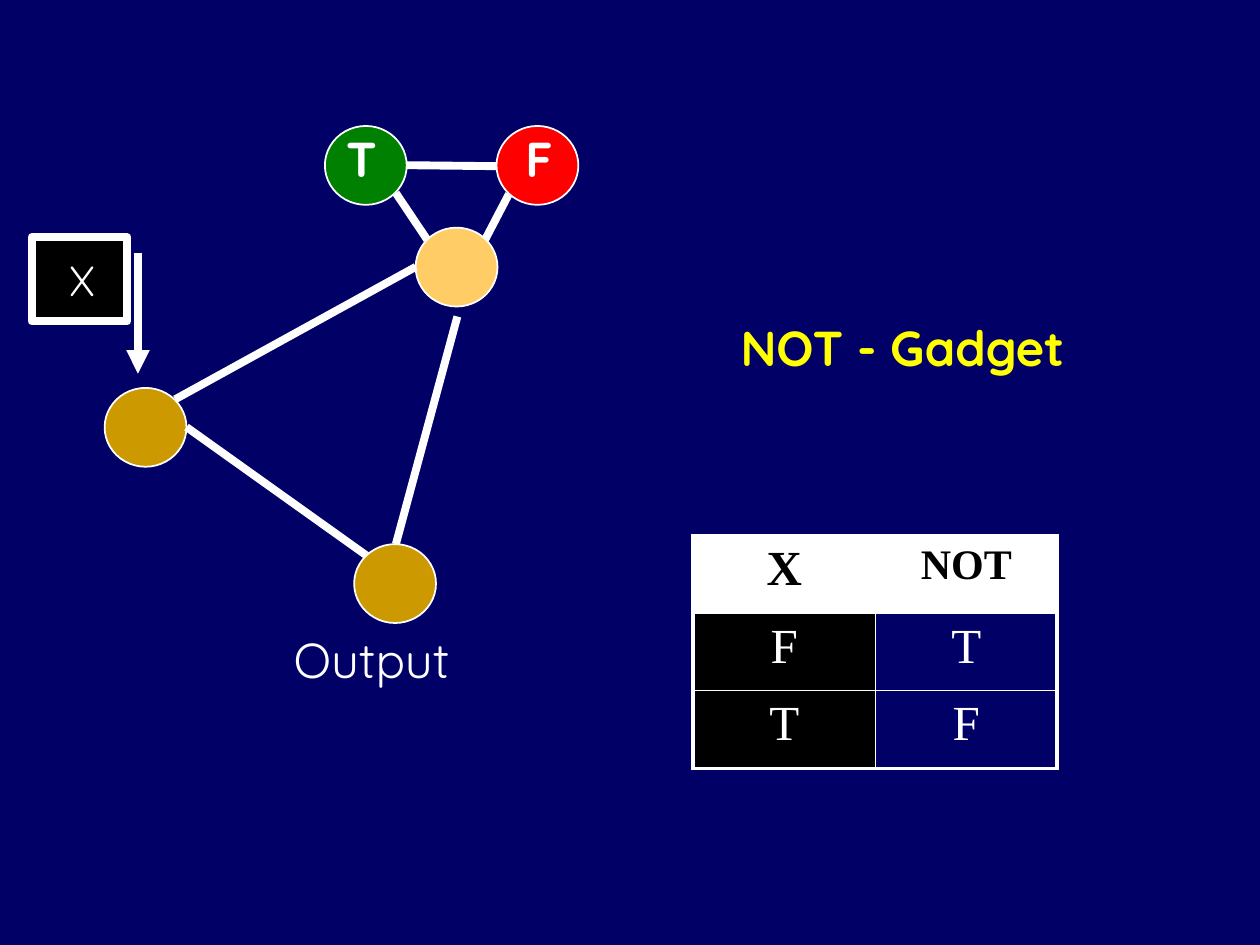
from lxml import etree
from pptx import Presentation
from pptx.dml.color import RGBColor
from pptx.enum.shapes import MSO_CONNECTOR, MSO_SHAPE
from pptx.enum.text import MSO_ANCHOR, MSO_AUTO_SIZE, PP_ALIGN
from pptx.oxml.ns import qn
from pptx.util import Cm, Pt

NAVY = RGBColor(0x00, 0x00, 0x66)
WHITE = RGBColor(0xFF, 0xFF, 0xFF)
BLACK = RGBColor(0x00, 0x00, 0x00)
RED = RGBColor(0xFF, 0x00, 0x00)
GREEN = RGBColor(0x00, 0x80, 0x00)
PEACH = RGBColor(0xFF, 0xCC, 0x66)
GOLD = RGBColor(0xCC, 0x99, 0x00)
YELLOW = RGBColor(0xFF, 0xFF, 0x00)

OVAL = MSO_SHAPE.OVAL
CALLOUT = MSO_SHAPE.LINE_CALLOUT_1
STRAIGHT = MSO_CONNECTOR.STRAIGHT
MIDDLE = MSO_ANCHOR.MIDDLE
TOP = MSO_ANCHOR.TOP
LEFT = PP_ALIGN.LEFT
CENTER = PP_ALIGN.CENTER
GROW = MSO_AUTO_SIZE.SHAPE_TO_FIT_TEXT

SIDE_MARGIN = Cm(0.76)
END_MARGIN = Cm(0.13)
THICK = Pt(4.5)


def write(frame, text, size=28, font="Quicksand", color=WHITE, bold=False, align=LEFT):
    paragraph = frame.paragraphs[0]
    paragraph.alignment = align
    run = paragraph.add_run()
    run.text = text
    run.font.size = Pt(size)
    run.font.name = font
    run.font.bold = bold
    run.font.color.rgb = color


def style_shape(shape, fill, width):
    shape.shadow.inherit = False
    shape.fill.solid()
    shape.fill.fore_color.rgb = fill
    shape.line.color.rgb = WHITE
    shape.line.width = width


prs = Presentation()
prs.slide_width = Cm(25.4)
prs.slide_height = Cm(19.05)
slide = prs.slides.add_slide(prs.slide_layouts[6])
slide.background.fill.solid()
slide.background.fill.fore_color.rgb = NAVY
shapes = slide.shapes

nodes = [
    (10.01, 2.54, RED),
    (8.38, 4.59, PEACH),
    (6.55, 2.54, GREEN),
    (7.14, 10.97, GOLD),
    (2.11, 7.82, GOLD),
]
for left, top, fill in nodes:
    node = shapes.add_shape(OVAL, Cm(left), Cm(top), Cm(1.65), Cm(1.59))
    style_shape(node, fill, Pt(1))

edges = [
    (8.2, 3.33, 10.01, 3.35),
    (10.26, 3.91, 9.78, 4.83),
    (7.98, 3.89, 8.61, 4.83),
    (3.53, 8.05, 8.38, 5.38),
    (9.22, 6.38, 7.98, 10.97),
    (3.76, 8.61, 7.39, 11.2),
]
for ends in edges:
    edge = shapes.add_connector(STRAIGHT, *[Cm(value) for value in ends])
    edge.line.color.rgb = WHITE
    edge.line.width = THICK
    etree.SubElement(edge._element.spPr, qn("a:effectLst"))

labels = [
    ("T", 6.22, 2.46, 2.46, 1.78, True, True, WHITE),
    ("F", 9.83, 2.46, 2.29, 1.78, False, True, WHITE),
    ("Output", 5.16, 12.57, 4.8, 1.45, False, False, WHITE),
    ("NOT - Gadget", 14.17, 6.27, 9.91, 1.78, False, True, YELLOW),
]
for text, left, top, width, height, wrap, bold, color in labels:
    label = shapes.add_textbox(Cm(left), Cm(top), Cm(width), Cm(height)).text_frame
    label.margin_left = label.margin_right = SIDE_MARGIN
    label.margin_top = label.margin_bottom = END_MARGIN
    label.word_wrap = wrap
    label.auto_size = GROW
    write(label, text, bold=bold, color=color)

input_callout = shapes.add_shape(CALLOUT, Cm(0.64), Cm(4.78), Cm(1.93), Cm(1.7))
for index, value in enumerate((0.19, 1.11, 1.62, 1.11)):
    input_callout.adjustments[index] = value
style_shape(input_callout, BLACK, THICK)
etree.SubElement(input_callout.line._get_or_add_ln(), qn("a:tailEnd"), type="triangle")
input_frame = input_callout.text_frame
input_frame.margin_left = input_frame.margin_right = SIDE_MARGIN
input_frame.margin_top = input_frame.margin_bottom = END_MARGIN
input_frame.vertical_anchor = MIDDLE
write(input_frame, "X", size=24)

truth_rows = [("X", "NOT"), ("F", "T"), ("T", "F")]
truth_table = shapes.add_table(3, 2, Cm(13.97), Cm(10.8), Cm(7.34), Cm(4.69)).table
truth_table.first_row = False
truth_table.horz_banding = False
for column, width in zip(truth_table.columns, (3.68, 3.66)):
    column.width = Cm(width)
for row, height in zip(truth_table.rows, (1.57, 1.55, 1.57)):
    row.height = Cm(height)

for r, values in enumerate(truth_rows):
    for c, value in enumerate(values):
        cell = truth_table.cell(r, c)
        header = r == 0
        cell.margin_left = cell.margin_right = SIDE_MARGIN
        cell.margin_top = cell.margin_bottom = END_MARGIN
        cell.vertical_anchor = TOP
        write(cell.text_frame, value, size=24 if value == "NOT" else 28,
              font="Times New Roman", color=BLACK if header else WHITE,
              bold=header, align=CENTER)
        outer_sides = {"a:lnL": c == 0, "a:lnR": c == 1, "a:lnT": r == 0, "a:lnB": r == 2}
        for side, outer in outer_sides.items():
            border = etree.SubElement(cell._tc.get_or_add_tcPr(), qn(side),
                                      w=str(Pt(2.25 if outer else 1)))
            border_fill = etree.SubElement(border, qn("a:solidFill"))
            etree.SubElement(border_fill, qn("a:srgbClr"), val=str(WHITE))
        if header or c == 0:
            cell.fill.solid()
            cell.fill.fore_color.rgb = WHITE if header else BLACK
        else:
            cell.fill.background()

prs.save("out.pptx")
